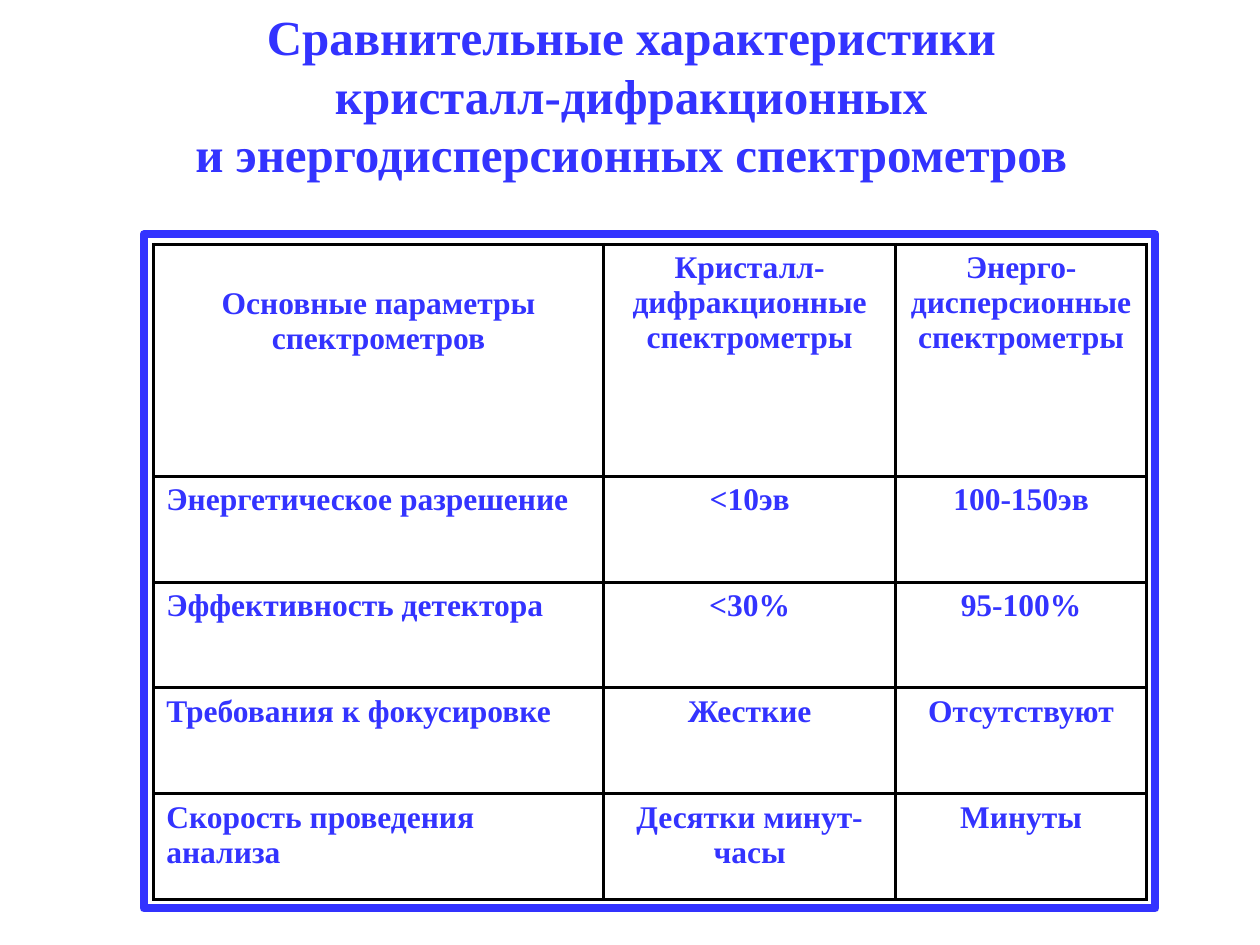
from dataclasses import dataclass

from lxml import etree
from pptx import Presentation
from pptx import util as u
from pptx.dml.color import RGBColor
from pptx.enum import shapes, text
from pptx.oxml.ns import qn

COLS, ROWS = 100, 75  # slide grid: one unit is a tenth of an inch


@dataclass(frozen=True)
class Theme:
    font: str = "Times New Roman"
    ink: str = "3333FF"
    paper: str = "FFFFFF"
    rule: str = "000000"
    title_size: int = 28
    cell_size: int = 18
    frame_width: float = 4.5
    rule_width: float = 2


@dataclass(frozen=True)
class Area:
    """A rectangle in grid columns and rows."""
    col: float
    row: float
    width: float
    height: float


@dataclass(frozen=True)
class TableRow:
    height: float
    texts: tuple[str, str, str]
    label_align: text.PP_ALIGN = text.PP_ALIGN.LEFT


THEME = Theme()
ALIGN = text.PP_ALIGN

FRAME = Area(11.4, 18.6, 80.3, 53.5)
TITLE = Area(0.1, 0, 100, 15)
TABLE = Area(12.2, 19.4, 78.8, 52)
COLUMN_WIDTHS = (35.7, 23.2, 19.9)
BODY_ROW = 8.4
HEADER_DROP = 3.3  # lowers the first heading by one text line

TITLE_LINES = (
    "Сравнительные характеристики",
    "кристалл-дифракционных",
    "и энергодисперсионных спектрометров",
)
TABLE_ROWS = (
    TableRow(18.4, ("Основные параметры спектрометров",
                    "Кристалл-дифракционные спектрометры",
                    "Энерго-дисперсионные спектрометры"), ALIGN.CENTER),
    TableRow(BODY_ROW, ("Энергетическое разрешение", "<10эв", "100-150эв"), ALIGN.JUSTIFY),
    TableRow(BODY_ROW, ("Эффективность детектора", "<30%", "95-100%"), ALIGN.JUSTIFY),
    TableRow(BODY_ROW, ("Требования к фокусировке", "Жесткие", "Отсутствуют")),
    TableRow(BODY_ROW, ("Скорость проведения анализа", "Десятки минут- часы", "Минуты")),
)

prs = Presentation()
prs.slide_width, prs.slide_height = u.Inches(10), u.Inches(7.5)


def across(cols: float) -> int:
    return round(prs.slide_width * cols / COLS)


def down(rows: float) -> int:
    return round(prs.slide_height * rows / ROWS)


def place(area: Area) -> tuple[int, int, int, int]:
    return across(area.col), down(area.row), across(area.width), down(area.height)


def write(p, words: str, size: int, align: text.PP_ALIGN) -> None:
    p.alignment = align
    r = p.add_run()
    r.text = words
    for name, value in {"name": THEME.font, "size": u.Pt(size), "bold": True}.items():
        setattr(r.font, name, value)
    r.font.color.rgb = RGBColor.from_string(THEME.ink)


def add_panel(s, area: Area):
    sp = s.shapes.add_shape(shapes.MSO_SHAPE.RECTANGLE, *place(area))
    sp.shadow.inherit = False
    sp.fill.solid()
    sp.fill.fore_color.rgb = RGBColor.from_string(THEME.paper)
    sp.line.fill.background()
    return sp


def add_frame(s, area: Area) -> None:
    sp = add_panel(s, area)
    sp.line.color.rgb = RGBColor.from_string(THEME.ink)
    sp.line.width = u.Pt(THEME.frame_width)


def add_title(s, area: Area, lines: tuple[str, ...]) -> None:
    tf = add_panel(s, area).text_frame
    for name, value in {"word_wrap": True, "vertical_anchor": text.MSO_ANCHOR.MIDDLE}.items():
        setattr(tf, name, value)
    for i, line in enumerate(lines):
        p = tf.add_paragraph() if i else tf.paragraphs[0]
        write(p, line, THEME.title_size, ALIGN.CENTER)


def rule_cell(cell) -> None:
    """Draw all four borders of a cell; they precede its fill in the XML."""
    props = cell._tc.get_or_add_tcPr()
    for i, side in enumerate(("a:lnL", "a:lnR", "a:lnT", "a:lnB")):
        ln = etree.Element(qn(side), w=str(u.Pt(THEME.rule_width)))
        fill = etree.SubElement(ln, qn("a:solidFill"))
        etree.SubElement(fill, qn("a:srgbClr"), val=THEME.rule)
        props.insert(i, ln)


def add_comparison(s, area: Area, rows: tuple[TableRow, ...]) -> None:
    table = s.shapes.add_table(len(rows), len(COLUMN_WIDTHS), *place(area)).table
    table.first_row = table.horz_banding = False
    for column, width in zip(table.columns, COLUMN_WIDTHS):
        column.width = across(width)
    for i, row in enumerate(rows):
        table.rows[i].height = down(row.height)
        for j, words in enumerate(row.texts):
            cell = table.cell(i, j)
            cell.fill.background()
            rule_cell(cell)
            align = ALIGN.CENTER if j else row.label_align
            write(cell.text_frame.paragraphs[0], words, THEME.cell_size, align)
    table.cell(0, 0).margin_top = down(HEADER_DROP)


def main() -> None:
    s = prs.slides.add_slide(prs.slide_layouts[6])
    # Frame behind the table
    add_frame(s, FRAME)
    # Heading
    add_title(s, TITLE, TITLE_LINES)
    # Comparison of the spectrometers
    add_comparison(s, TABLE, TABLE_ROWS)
    prs.save("out.pptx")


if __name__ == "__main__":
    main()
